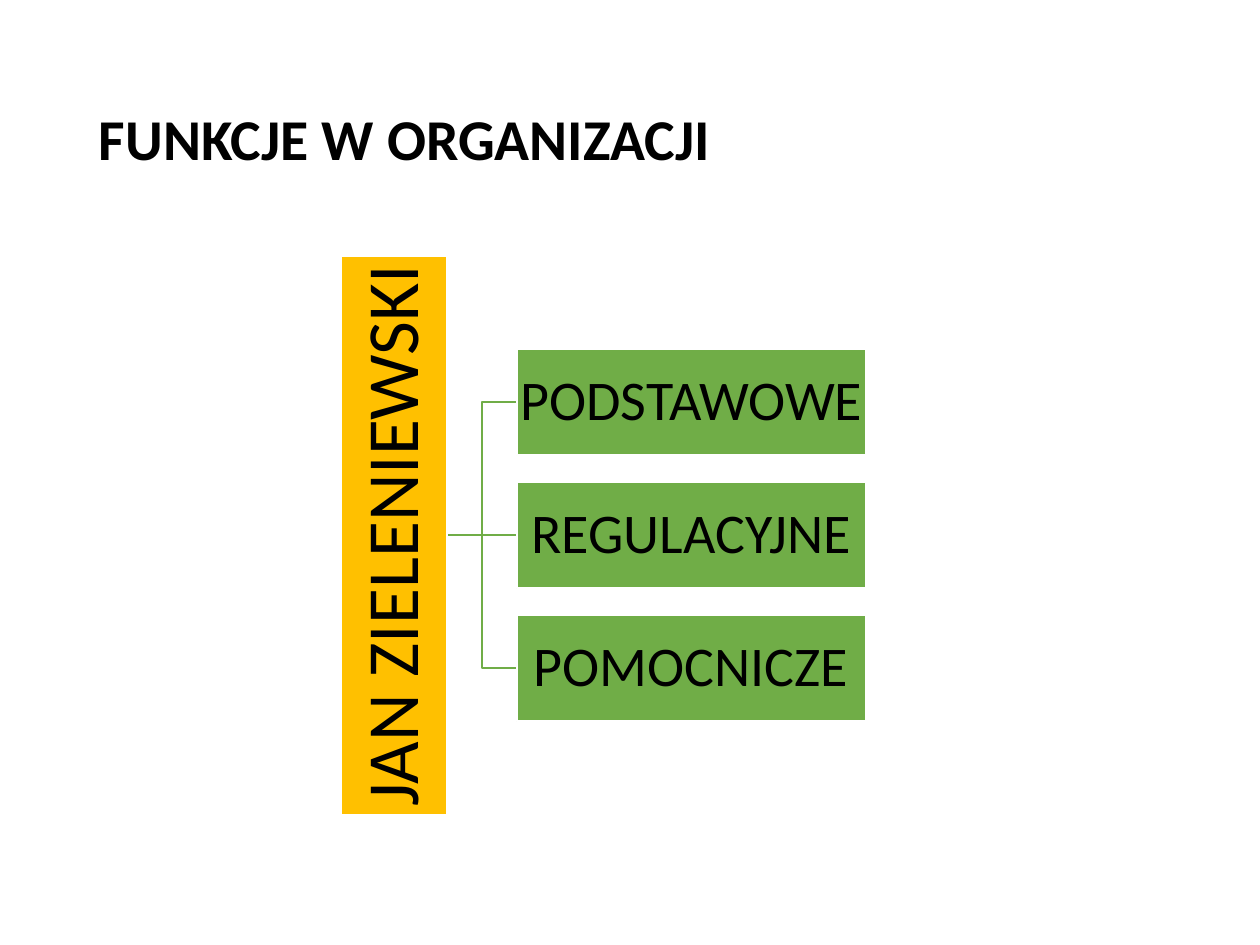
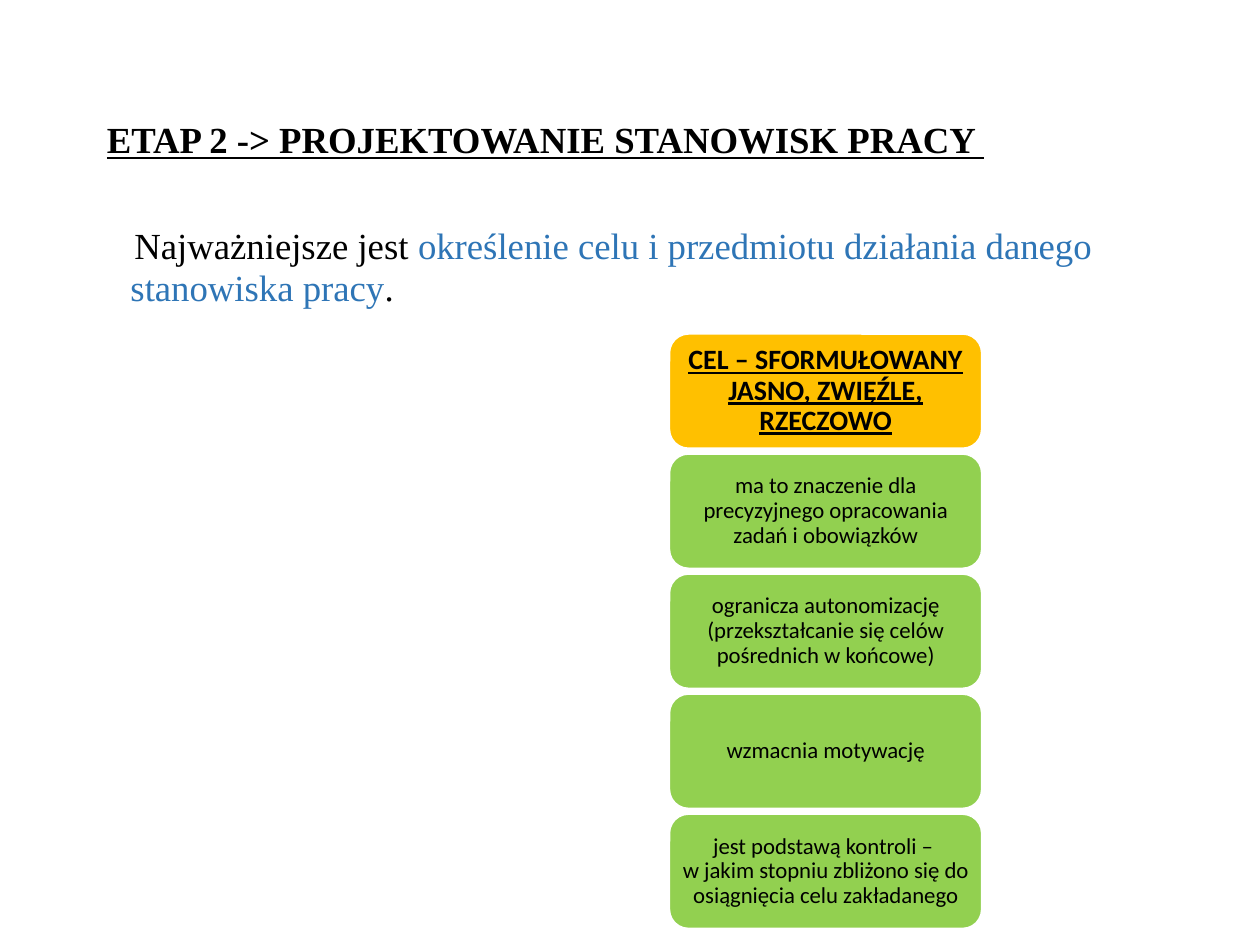
from dataclasses import dataclass

from lxml.etree import SubElement
from pptx import Presentation
from pptx.dml.color import RGBColor
from pptx.enum.shapes import MSO_CONNECTOR, MSO_SHAPE
from pptx.enum.text import MSO_ANCHOR, PP_ALIGN
from pptx.oxml.ns import qn
from pptx.util import Pt

FUNCTIONS_TITLE = "FUNKCJE W ORGANIZACJI"
AUTHOR = "JAN ZIELENIEWSKI"
FUNCTIONS = ["PODSTAWOWE", "REGULACYJNE", "POMOCNICZE"]

STAGE_HEADING = "ETAP 2 -> PROJEKTOWANIE STANOWISK PRACY "
STAGE_LEAD = [
    ("Najważniejsze jest ", False),
    ("określenie celu i przedmiotu działania danego stanowiska pracy", True),
    (".", False),
]
GOAL = "CEL – SFORMUŁOWANY JASNO, ZWIĘŹLE, RZECZOWO"
GOAL_REASONS = [
    "ma to znaczenie dla precyzyjnego opracowania zadań i obowiązków",
    "ogranicza autonomizację (przekształcanie się celów pośrednich w końcowe)",
    "wzmacnia motywację",
    "jest podstawą kontroli – \vw jakim stopniu zbliżono się do osiągnięcia celu zakładanego",
]


@dataclass(frozen=True)
class Theme:
    text: RGBColor = RGBColor(0, 0, 0)
    outline: RGBColor = RGBColor(255, 255, 255)
    lead: RGBColor = RGBColor(0xFF, 0xC0, 0x00)
    branch: RGBColor = RGBColor(0x70, 0xAD, 0x47)
    reason: RGBColor = RGBColor(0x92, 0xD0, 0x50)
    accent: RGBColor = RGBColor(0x2E, 0x75, 0xB6)
    sans: str = "Calibri"
    serif: str = "Times New Roman"
    title_size: int = 33
    root_size: int = 42
    branch_size: int = 32
    stage_size: int = 21
    goal_size: int = 16
    reason_size: int = 13
    line_spacing: float = 0.9
    line_width: int = 1


THEME = Theme()


def style(paragraph, size, family=THEME.sans, bold=False, underline=False):
    font = paragraph.font
    font.name, font.size, font.bold, font.underline = family, Pt(size), bold, underline
    font.color.rgb = THEME.text
    paragraph.line_spacing = THEME.line_spacing


def add_text_area(slide, left, top, width, height):
    frame = slide.shapes.add_textbox(Pt(left), Pt(top), Pt(width), Pt(height)).text_frame
    frame.word_wrap = True
    return frame


def add_block(slide, kind, box, fill, text, size, insets, **emphasis):
    """Add a filled block with centred text; insets are (horizontal, vertical)."""
    block = slide.shapes.add_shape(kind, *map(Pt, box))
    block.shadow.inherit = False
    block.fill.solid()
    block.fill.fore_color.rgb = fill
    block.line.color.rgb = THEME.outline
    block.line.width = Pt(THEME.line_width)
    frame = block.text_frame
    frame.word_wrap = True
    frame.vertical_anchor = MSO_ANCHOR.MIDDLE
    frame.margin_left = frame.margin_right = Pt(insets[0])
    frame.margin_top = frame.margin_bottom = Pt(insets[1])
    paragraph = frame.paragraphs[0]
    paragraph.text = text
    paragraph.alignment = PP_ALIGN.CENTER
    style(paragraph, size, **emphasis)
    return block


def add_branch_line(slide, x1, y1, x2, y2):
    kind = MSO_CONNECTOR.STRAIGHT if y1 == y2 else MSO_CONNECTOR.ELBOW
    line = slide.shapes.add_connector(kind, Pt(x1), Pt(y1), Pt(x2), Pt(y2))
    line.line.color.rgb = THEME.branch
    line.line.width = Pt(THEME.line_width)
    SubElement(line._element.spPr, qn("a:effectLst"))


def build_functions(slide):
    title = add_text_area(slide, 49.5, 28.8, 621, 104.4)
    title.vertical_anchor = MSO_ANCHOR.MIDDLE
    title.paragraphs[0].text = FUNCTIONS_TITLE
    style(title.paragraphs[0], THEME.title_size, bold=True)

    center_y, pitch = 305.9, 76
    thickness, root_length, root_right = 60.6, 319.5, 255.6
    branch_left, branch_width = 295.4, 199.4
    middles = [center_y + (i - (len(FUNCTIONS) - 1) / 2) * pitch
               for i in range(len(FUNCTIONS))]

    for middle in middles:
        add_branch_line(slide, root_right, center_y, branch_left, middle)

    root_box = (root_right - (thickness + root_length) / 2, center_y - thickness / 2,
                root_length, thickness)
    root = add_block(slide, MSO_SHAPE.RECTANGLE, root_box, THEME.lead,
                     AUTHOR, THEME.root_size, (2, 2))
    root.rotation = 270

    for function, middle in zip(FUNCTIONS, middles):
        box = (branch_left, middle - thickness / 2, branch_width, thickness)
        add_block(slide, MSO_SHAPE.RECTANGLE, box, THEME.branch,
                  function, THEME.branch_size, (1.4, 1.4))


def build_stage(slide):
    frame = add_text_area(slide, 54, 66.2, 621, 386.6)
    heading = frame.paragraphs[0]
    heading.text = STAGE_HEADING
    style(heading, THEME.stage_size, THEME.serif, bold=True, underline=True)

    lead = frame.add_paragraph()
    lead_indent = lead._p.get_or_add_pPr()
    lead_indent.set("marL", str(Pt(13.5)))
    lead_indent.set("indent", str(Pt(2.25)))
    style(lead, THEME.stage_size, THEME.serif)
    lead.line_spacing = 0.95
    lead.space_before = Pt(37)
    for words, stressed in STAGE_LEAD:
        run = lead.add_run()
        run.text = words
        if stressed:
            run.font.color.rgb = THEME.accent

    left, top, width, height, pitch = 382.5, 190.8, 178.5, 65.4, 68.6
    for i, text in enumerate([GOAL, *GOAL_REASONS]):
        is_goal = i == 0
        add_block(slide, MSO_SHAPE.ROUNDED_RECTANGLE,
                  (left, top + i * pitch, width, height),
                  THEME.lead if is_goal else THEME.reason, text,
                  THEME.goal_size if is_goal else THEME.reason_size,
                  (4.8 if is_goal else 3.6, 2), bold=is_goal, underline=is_goal)


def main():
    deck = Presentation()
    deck.slide_width, deck.slide_height = Pt(720), Pt(540)
    for build in (build_functions, build_stage):
        build(deck.slides.add_slide(deck.slide_layouts[6]))
    deck.save("out.pptx")


if __name__ == "__main__":
    main()
